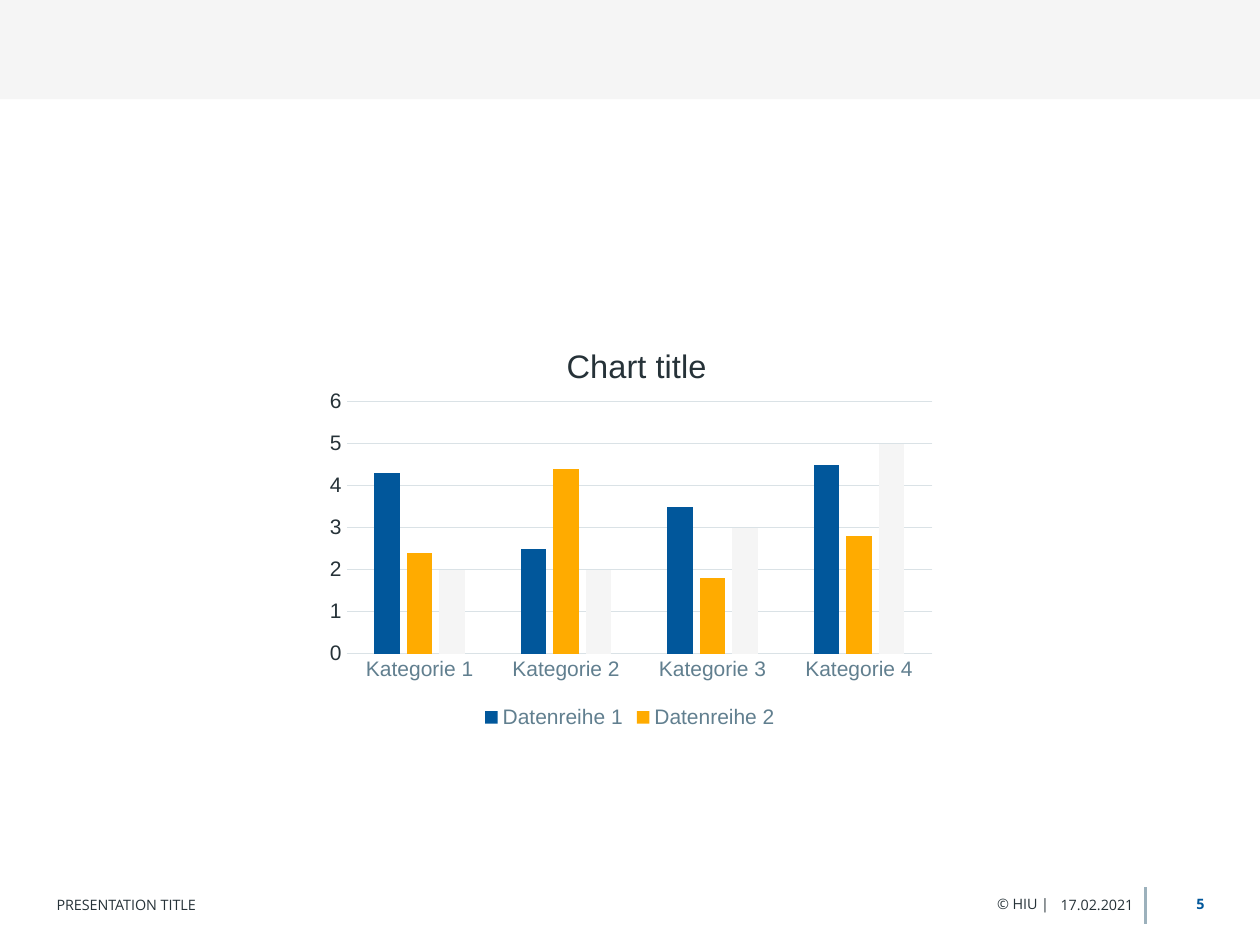
from lxml import etree
from pptx import Presentation
from pptx import util as u
from pptx.chart import data as chart_data
from pptx.dml.color import RGBColor
from pptx.enum import chart as ch
from pptx.enum import shapes, text
from pptx.oxml import parse_xml
from pptx.oxml.ns import nsdecls, qn

BLUE = RGBColor(0x01, 0x57, 0x9B)
AMBER = RGBColor(0xFF, 0xAB, 0x00)
PALE = RGBColor(0xF5, 0xF5, 0xF5)
INK = RGBColor(0x26, 0x32, 0x38)
SLATE = RGBColor(0x61, 0x7F, 0x8F)
GRID = RGBColor(0xDA, 0xE2, 0xE6)
RULE = RGBColor(0x9C, 0xB1, 0xBC)

CATEGORIES = [f"Kategorie {n}" for n in range(1, 5)]
SERIES = [
    ("Datenreihe 1", (4.3, 2.5, 3.5, 4.5), BLUE),
    ("Datenreihe 2", (2.4, 4.4, 1.8, 2.8), AMBER),
    ("Datenreihe 3", (2, 2, 3, 5), PALE),
]


def header_band(slide, left, top, width, height):
    band = slide.shapes.add_shape(
        shapes.MSO_SHAPE.RECTANGLE, u.Cm(left), u.Cm(top), u.Cm(width), u.Cm(height))
    band.shadow.inherit = False
    band.fill.solid()
    band.fill.fore_color.rgb = PALE
    band.line.fill.background()


def footer_text(slide, wording, left, top, width, height, align, color=INK, bold=False):
    label = slide.shapes.add_textbox(u.Cm(left), u.Cm(top), u.Cm(width), u.Cm(height))
    frame = label.text_frame
    frame.word_wrap = True
    frame.vertical_anchor = text.MSO_ANCHOR.MIDDLE
    frame.margin_left = frame.margin_right = frame.margin_top = frame.margin_bottom = 0
    frame.text = wording
    paragraph = frame.paragraphs[0]
    paragraph.alignment = align
    font = paragraph.runs[0].font
    font.name, font.size, font.bold = "Open Sans", u.Pt(8.2), bold
    font.color.rgb = color


def footer(slide, left, top, width, height):
    right = left + width
    rule_x = u.Cm(right - 1.19)
    rule = slide.shapes.add_connector(
        shapes.MSO_CONNECTOR.STRAIGHT, rule_x, u.Cm(top), rule_x, u.Cm(top + height))
    rule.line.color.rgb = RULE
    rule.line.width = u.Pt(1.5)
    etree.SubElement(rule._element.spPr, qn("a:effectLst"))

    line_top, line_height = top + 0.12, 0.41
    to_left, to_right = text.PP_ALIGN.LEFT, text.PP_ALIGN.RIGHT
    footer_text(slide, "5", right - 1.12, line_top, 1.12, line_height, to_right, BLUE, True)
    footer_text(slide, "© HIU |", right - 4.78, line_top, 1.65, line_height, to_right)
    footer_text(slide, "17.02.2021", right - 3.53, line_top + 0.02, 2.1, line_height, to_right)
    footer_text(slide, "PRESENTATION TITLE", left, line_top + 0.02, 8.08, line_height, to_left)


def style_font(font, size, color):
    font.name, font.size, font.bold = "Arial", u.Pt(size), False
    font.color.rgb = color


def style_line(line, color):
    line.color.rgb = color
    line.width = u.Pt(0.75)


def manual_layout(inner=False, **fractions):
    target = '<c:layoutTarget val="inner"/>' if inner else ""
    modes = '<c:xMode val="edge"/><c:yMode val="edge"/>'
    places = "".join(f'<c:{key} val="{value}"/>' for key, value in fractions.items())
    return parse_xml(f'<c:layout {nsdecls("c")}><c:manualLayout>{target}{modes}{places}'
                     '</c:manualLayout></c:layout>')


def place_layout(parent, layout, index):
    for old in parent.findall(qn("c:layout")):
        parent.remove(old)
    parent.insert(index, layout)


def column_chart(slide, left, top, width, height):
    figures = chart_data.CategoryChartData()
    figures.categories = CATEGORIES
    for name, values, _ in SERIES:
        figures.add_series(name, values)
    chart = slide.shapes.add_chart(
        ch.XL_CHART_TYPE.COLUMN_CLUSTERED,
        u.Cm(left), u.Cm(top), u.Cm(width), u.Cm(height), figures).chart
    style_font(chart.font, 10, INK)

    chart.has_title = True
    heading = chart.chart_title.text_frame
    heading.text = "Chart title"
    style_font(heading.paragraphs[0].runs[0].font, 18.6, INK)
    place_layout(chart.chart_title._element, manual_layout(x=0.39, y=0.06), 1)

    columns = chart.plots[0]
    columns.gap_width, columns.overlap = 219, -27
    columns.vary_by_categories = False
    for series, (_, _, color) in zip(columns.series, SERIES):
        series.format.fill.solid()
        series.format.fill.fore_color.rgb = color

    categories, scale = chart.category_axis, chart.value_axis
    for axis, color in ((categories, SLATE), (scale, INK)):
        axis.major_tick_mark = axis.minor_tick_mark = ch.XL_TICK_MARK.NONE
        style_font(axis.tick_labels.font, 12, color)
    style_line(categories.format.line, GRID)
    scale.format.line.fill.background()
    scale.minimum_scale, scale.maximum_scale, scale.major_unit = 0, 6, 1
    style_line(scale.major_gridlines.format.line, GRID)
    plot_area = chart._chartSpace.chart.plotArea
    place_layout(plot_area, manual_layout(True, x=0.05, y=0.21, w=0.93, h=0.6), 0)

    chart.has_legend = True
    legend = chart.legend
    legend.position = ch.XL_LEGEND_POSITION.BOTTOM
    legend.include_in_layout = False
    style_font(legend.font, 12, SLATE)
    legend._element.insert(1, parse_xml(
        f'<c:legendEntry {nsdecls("c")}><c:idx val="2"/><c:delete val="1"/></c:legendEntry>'))


def main():
    deck = Presentation()
    deck.slide_width, deck.slide_height = u.Cm(25.4), u.Cm(19.05)
    slide = deck.slides.add_slide(deck.slide_layouts[6])
    header_band(slide, 0, 0, 25.4, 2)
    footer(slide, 1.14, 17.89, 23.14, 0.73)
    column_chart(slide, 6.35, 6.32, 12.7, 8.47)
    deck.save("out.pptx")


if __name__ == "__main__":
    main()
